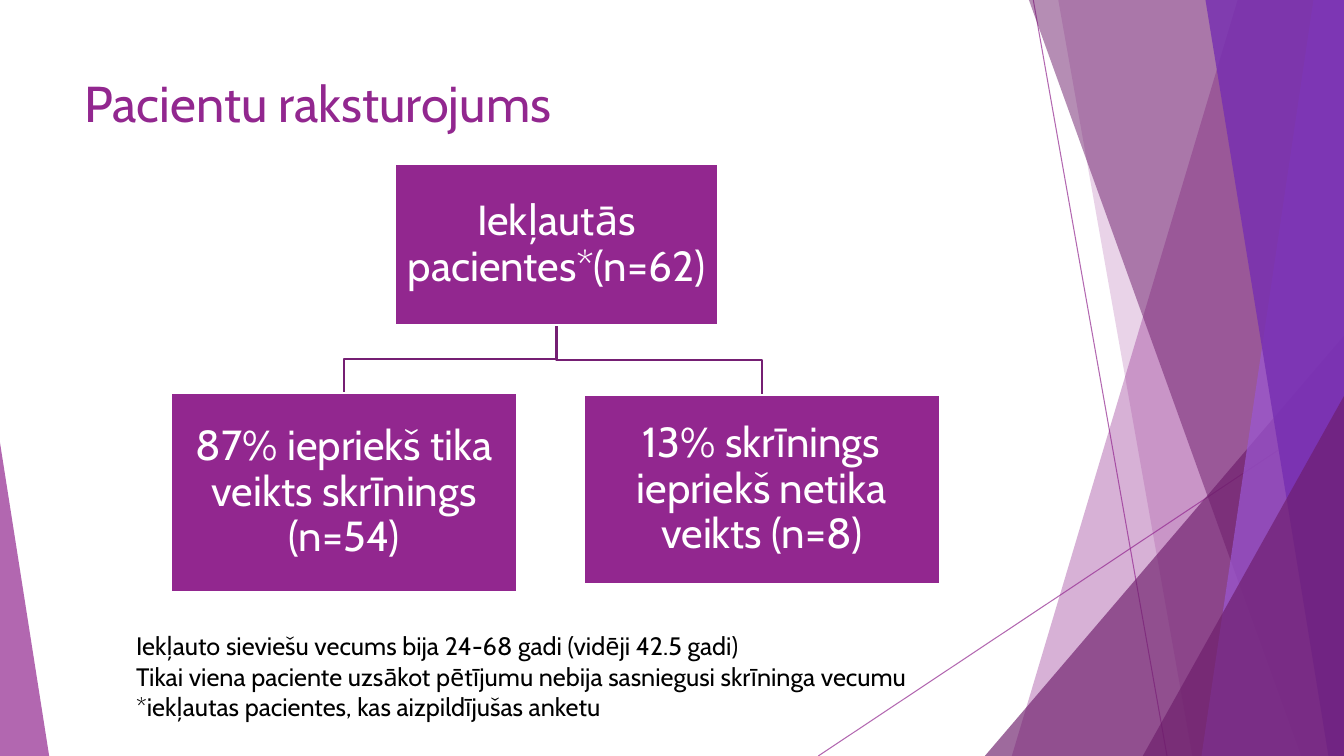
from dataclasses import dataclass

from lxml.etree import SubElement
from pptx import Presentation
from pptx.dml.color import RGBColor
from pptx.enum.shapes import MSO_CONNECTOR as Connector, MSO_SHAPE as Shape
from pptx.enum.text import MSO_ANCHOR as Anchor, MSO_AUTO_SIZE as AutoSize, PP_ALIGN as Align
from pptx.oxml.ns import qn
from pptx.util import Cm, Pt

WIDTH, HEIGHT = 33.87, 19.05


@dataclass(frozen=True)
class Theme:
    font: str = "Cabin"
    accent: str = "92278F"
    dark: str = "6D1D6B"
    branch: str = "751F73"
    violet: str = "9B57D3"
    indigo: str = "762EB1"
    white: str = "FFFFFF"
    black: str = "000000"
    title_size: int = 36
    box_size: int = 30
    note_size: int = 18
    hairline: float = 0.75
    outline: float = 1.5


def write_text(frame, lines, *, font, size, colour, align=Align.LEFT,
               anchor=Anchor.TOP, spacing=None, inset=None):
    """Fill a text frame with one paragraph per line."""
    frame.word_wrap = True
    frame.vertical_anchor = anchor
    if inset is not None:
        frame.margin_left = frame.margin_right = Cm(inset)
        frame.margin_top = frame.margin_bottom = Cm(inset)
    for index, line in enumerate(lines):
        paragraph = frame.add_paragraph() if index else frame.paragraphs[0]
        paragraph.alignment = align
        paragraph.line_spacing = spacing
        run = paragraph.add_run()
        run.text = line
        run.font.name = font
        run.font.size = Pt(size)
        run.font.color.rgb = RGBColor.from_string(colour)


def set_opacity(shape, percent):
    for colour in shape.element.spPr.iter(qn("a:srgbClr")):
        SubElement(colour, qn("a:alpha")).set("val", str(percent * 1000))


class SlideBuilder:
    def __init__(self, slide, theme):
        self.slide = slide
        self.shapes = slide.shapes
        self.theme = theme

    def paint(self, shape, fill=None, line=None, opacity=100):
        shape.shadow.inherit = False
        if fill:
            shape.fill.solid()
            shape.fill.fore_color.rgb = RGBColor.from_string(fill)
        else:
            shape.fill.background()
        if line:
            shape.line.color.rgb = RGBColor.from_string(line)
            shape.line.width = Pt(self.theme.outline)
        else:
            shape.line.fill.background()
        if opacity < 100:
            set_opacity(shape, opacity)

    def outline(self, points, close):
        start, *rest = [(Cm(x), Cm(y)) for x, y in points]
        builder = self.shapes.build_freeform(*start)
        builder.add_line_segments(rest, close=close)
        return builder.convert_to_shape()

    def ray(self, start, end):
        line = self.shapes.add_connector(
            Connector.STRAIGHT, *(Cm(value) for value in (*start, *end)))
        line.line.color.rgb = RGBColor.from_string(self.theme.accent)
        line.line.width = Pt(self.theme.hairline)
        set_opacity(line, 70)
        SubElement(line.element.spPr, qn("a:effectLst"))

    def panel(self, top_x, bottom_x, colour, opacity):
        """Slanted panel that reaches the right edge of the slide."""
        points = [(top_x, 0), (WIDTH, 0), (WIDTH, HEIGHT), (bottom_x, HEIGHT)]
        self.paint(self.outline(points, close=True), colour, opacity=opacity)

    def corner(self, left, top, right, apex, colour, opacity):
        """Triangle standing on the bottom edge of the slide."""
        shape = self.shapes.add_shape(Shape.ISOSCELES_TRIANGLE, Cm(left), Cm(top),
                                      Cm(right - left), Cm(HEIGHT - top))
        shape.adjustments[0] = apex
        self.paint(shape, colour, opacity=opacity)

    def title(self, text, left, top, width, height):
        shape = self.shapes.title
        shape.left, shape.top, shape.width, shape.height = map(Cm, (left, top, width, height))
        write_text(shape.text_frame, [text], font=self.theme.font,
                   size=self.theme.title_size, colour=self.theme.accent)

    def branch(self, parent, child):
        """Elbow from the parent's bottom centre to the child's top centre."""
        left, top, width, height = parent
        start_x, start_y = left + width / 2, top + height
        end_x, end_y = child[0] + child[2] / 2, child[1]
        middle = (start_y + end_y) / 2
        points = [(start_x, start_y), (start_x, middle), (end_x, middle), (end_x, end_y)]
        self.paint(self.outline(points, close=False), line=self.theme.branch)

    def box(self, text, place):
        shape = self.shapes.add_shape(Shape.RECTANGLE, *map(Cm, place))
        self.paint(shape, self.theme.accent, self.theme.white)
        write_text(shape.text_frame, [text], font=self.theme.font,
                   size=self.theme.box_size, colour=self.theme.white,
                   align=Align.CENTER, anchor=Anchor.MIDDLE, spacing=0.9, inset=0.05)

    def notes(self, lines, *place):
        frame = self.shapes.add_textbox(*map(Cm, place)).text_frame
        write_text(frame, lines, font=self.theme.font,
                   size=self.theme.note_size, colour=self.theme.black)
        frame.auto_size = AutoSize.SHAPE_TO_FIT_TEXT


def main():
    presentation = Presentation()
    presentation.slide_width, presentation.slide_height = Cm(WIDTH), Cm(HEIGHT)
    theme = Theme()
    slide = presentation.slides.add_slide(presentation.slide_layouts[5])
    builder = SlideBuilder(slide, theme)

    # Background facets
    builder.ray((26.04, 0), (29.41, HEIGHT))
    builder.ray((WIDTH, 10.24), (20.62, HEIGHT))
    builder.panel(31.19, 25.5, theme.accent, 36)
    builder.panel(26.67, 30.05, theme.accent, 20)
    builder.corner(24.82, 8.46, WIDTH, 1, theme.dark, 66)
    builder.panel(25.93, 32.79, theme.dark, 50)
    builder.panel(33.1, 30.28, theme.violet, 70)
    builder.panel(30.38, 33.48, theme.indigo, 80)
    builder.corner(28.8, 9.98, WIDTH, 1, theme.dark, 66)
    builder.corner(0, 11.15, 1.24, 0, theme.accent, 70)

    # Title
    builder.title("Pacientu raksturojums", 1.88, 1.7, 23.88, 3.66)

    # Patient tree
    included = (9.96, 4.14, 8.13, 4.06)
    groups = {
        "87% iepriekš tika veikts skrīnings (n=54)": (4.32, 9.91, 8.71, 5),
        "13% skrīnings iepriekš netika veikts (n=8)": (14.71, 9.96, 8.97, 4.75),
    }
    for place in groups.values():
        builder.branch(included, place)
    builder.box("Iekļautās pacientes*(n=62)", included)
    for text, place in groups.items():
        builder.box(text, place)

    # Remarks
    builder.notes([
        "Iekļauto sieviešu vecums bija 24-68 gadi (vidēji 42.5 gadi)",
        "Tikai viena paciente uzsākot pētījumu nebija sasniegusi skrīninga vecumu",
        "*iekļautas pacientes, kas aizpildījušas anketu",
    ], 3.18, 15.77, 21.62, 2.57)

    presentation.save("out.pptx")


if __name__ == "__main__":
    main()
